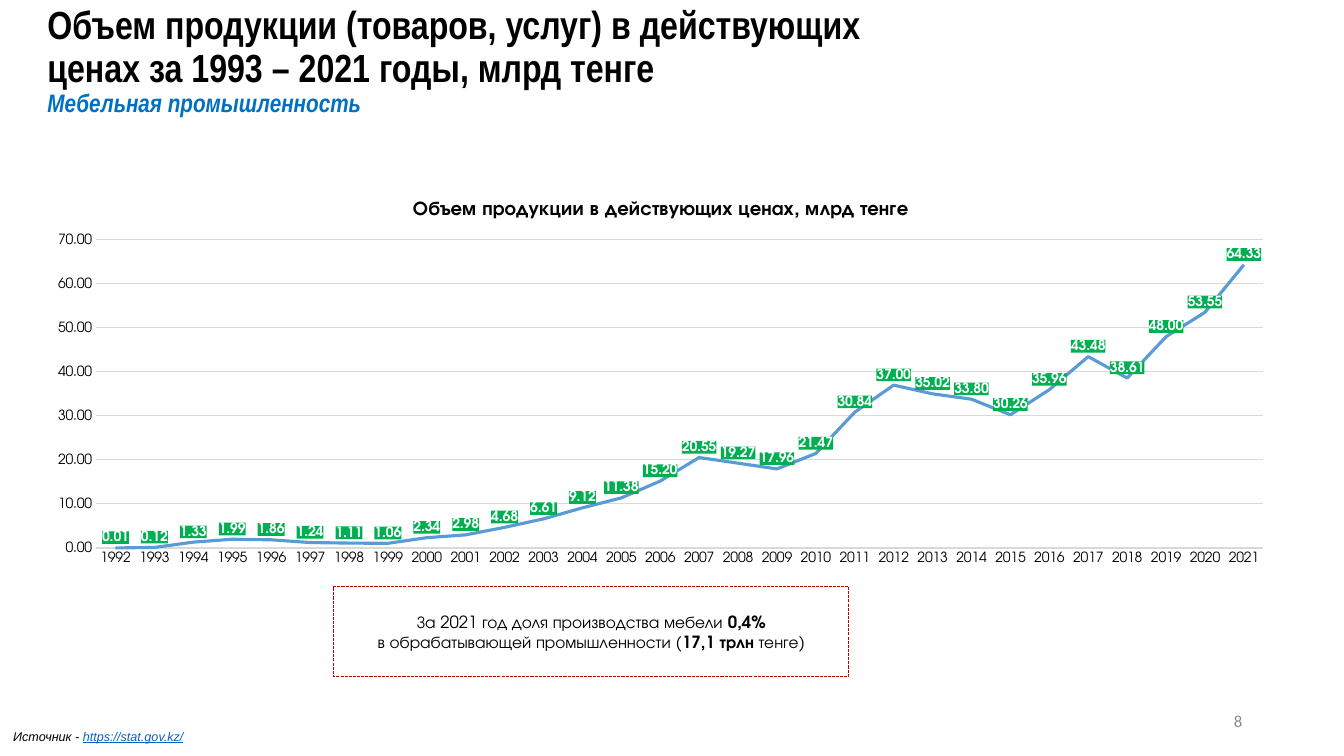
from lxml import etree
from pptx import Presentation
from pptx.chart.data import CategoryChartData
from pptx.dml.color import RGBColor
from pptx.enum.chart import XL_CHART_TYPE, XL_LABEL_POSITION, XL_MARKER_STYLE, XL_TICK_MARK
from pptx.enum.dml import MSO_LINE
from pptx.enum.shapes import MSO_SHAPE
from pptx.enum.text import MSO_ANCHOR, MSO_AUTO_SIZE, PP_ALIGN
from pptx.oxml import parse_xml
from pptx.oxml.ns import nsdecls
from pptx.util import Emu, Pt

PX = 9144  # one hundredth of an inch
LEFT, CENTER, RIGHT = PP_ALIGN.LEFT, PP_ALIGN.CENTER, PP_ALIGN.RIGHT
MIDDLE, TOP = MSO_ANCHOR.MIDDLE, MSO_ANCHOR.TOP
NO_AUTOFIT = MSO_AUTO_SIZE.NONE
RECTANGLE = MSO_SHAPE.RECTANGLE
LINE_CHART = XL_CHART_TYPE.LINE
ABOVE = XL_LABEL_POSITION.ABOVE
NO_TICK = XL_TICK_MARK.NONE
NO_MARKER = XL_MARKER_STYLE.NONE
DASH = MSO_LINE.SQUARE_DOT
TITLE_ONLY = 5

COLORS = {
    "text": "000000", "white": "FFFFFF", "subtitle": "0070C0", "frame": "C00000",
    "grid": "D9D9D9", "series": "5B9BD5", "label": "00B050", "url": "0563C1", "number": "8C8C8C",
}
GEOMETRIC = "TeX Gyre Adventor"
HEADING = {"name": "Arial Narrow", "size": 28, "bold": True, "color": "text"}
SUBTITLE = {**HEADING, "size": 18, "italic": True, "color": "subtitle"}
NOTE = {"name": GEOMETRIC, "size": 12, "bold": False, "color": "text"}
NOTE_BOLD = {**NOTE, "bold": True}
AXIS = {"name": GEOMETRIC, "size": 10, "bold": False, "color": "text"}
LABEL = {**AXIS, "bold": True, "color": "white"}
CHART_TITLE = {**AXIS, "size": 14, "bold": True}
SOURCE = {"name": "Arial", "size": 9, "italic": True, "color": "text"}
URL = {**SOURCE, "underline": True, "color": "url"}
NUMBER = {"name": "Calibri", "size": 12, "color": "number"}

FIRST_YEAR = 1992
OUTPUT = [
    0.01, 0.12, 1.33, 1.99, 1.86, 1.24, 1.11, 1.06, 2.34, 2.98,
    4.68, 6.61, 9.12, 11.38, 15.20, 20.55, 19.27, 17.96, 21.47, 30.84,
    37.00, 35.02, 33.80, 30.26, 35.96, 43.48, 38.61, 48.00, 53.55, 64.33,
]
SERIES_NAME = "Объем продукции в действующих ценах, млрд тенге"


class Page:
    def __init__(self, deck):
        self.slide = deck.slides.add_slide(deck.slide_layouts[TITLE_ONLY])
        self.shapes = self.slide.shapes

    def area(self, *lengths):
        return [Emu(length * PX) for length in lengths]

    def style(self, font, look):
        for key, value in look.items():
            if key == "color":
                font.color.rgb = RGBColor.from_string(COLORS[value])
            else:
                setattr(font, key, Pt(value) if key == "size" else value)

    def stroke(self, line, color, width):
        line.color.rgb = RGBColor.from_string(COLORS[color])
        line.width = Pt(width)

    def fill_text(self, box, paragraphs, align=LEFT, anchor=MIDDLE):
        """Fill a box with paragraphs, each a list of (text, look) spans."""
        frame = box.text_frame
        frame.word_wrap = True
        frame.auto_size = NO_AUTOFIT
        frame.vertical_anchor = anchor
        for index, spans in enumerate(paragraphs):
            para = frame.add_paragraph() if index else frame.paragraphs[0]
            para.alignment = align
            for text, look in spans:
                if text == "\n":
                    para.add_line_break()
                    continue
                span = para.add_run()
                span.text = text
                self.style(span.font, look)
        return frame

    def title(self, area, spans):
        box = self.shapes.title
        box.left, box.top, box.width, box.height = self.area(*area)
        self.fill_text(box, [spans]).paragraphs[0].line_spacing = 0.9

    def text(self, area, spans, **layout):
        return self.fill_text(self.shapes.add_textbox(*self.area(*area)), [spans], **layout)

    def framed_note(self, area, paragraphs):
        box = self.shapes.add_shape(RECTANGLE, *self.area(*area))
        box.shadow.inherit = False
        box.fill.background()
        self.stroke(box.line, "frame", 0.75)
        box.line.dash_style = DASH
        self.fill_text(box, paragraphs, align=CENTER)

    def line_chart(self, area, name, categories, values):
        data = CategoryChartData(number_format="0.00")
        data.categories = categories
        data.add_series(name, values)
        chart = self.shapes.add_chart(LINE_CHART, *self.area(*area), data).chart
        self.style(chart.font, AXIS)
        chart.has_legend = False
        chart.has_title = True
        heading = chart.chart_title.text_frame
        heading.text = name
        self.style(heading.paragraphs[0].runs[0].font, CHART_TITLE)

        for axis in (chart.category_axis, chart.value_axis):
            axis.major_tick_mark = axis.minor_tick_mark = NO_TICK
            self.style(axis.tick_labels.font, AXIS)
        self.stroke(chart.category_axis.format.line, "grid", 0.75)
        scale = chart.value_axis
        scale.minimum_scale, scale.maximum_scale, scale.major_unit = 0, 70, 10
        scale.tick_labels.number_format = "#,##0.00"
        scale.tick_labels.number_format_is_linked = False
        scale.format.line.fill.background()
        self.stroke(scale.major_gridlines.format.line, "grid", 0.75)

        plot = chart.plots[0]
        plot.vary_by_categories = False
        series = plot.series[0]
        series.smooth = False
        series.marker.style = NO_MARKER
        self.stroke(series.format.line, "series", 2.25)
        labels = series.data_labels
        labels.show_value = True
        labels.position = ABOVE
        labels.number_format = "0.00"
        labels.number_format_is_linked = False
        self.style(labels.font, LABEL)
        self.fill_labels(chart)
        self.place_plot(chart, x=0.05, y=0.15, w=0.93, h=0.79)

    def fill_labels(self, chart):
        number_format = chart.element.xpath(".//c:ser/c:dLbls/c:numFmt")[0]
        number_format.addnext(parse_xml(
            f'<c:spPr {nsdecls("c", "a")}><a:solidFill>'
            f'<a:srgbClr val="{COLORS["label"]}"/></a:solidFill></c:spPr>'))

    def place_plot(self, chart, **fractions):
        """Fix the inner plot area as fractions of the chart."""
        plot_area = chart.element.xpath(".//c:plotArea")[0]
        for automatic in plot_area.xpath("c:layout"):
            plot_area.remove(automatic)
        layout = parse_xml(f'<c:layout {nsdecls("c")}><c:manualLayout/></c:layout>')
        settings = {"layoutTarget": "inner", "xMode": "edge", "yMode": "edge", **fractions}
        for tag, value in settings.items():
            etree.SubElement(layout[0], f"{{{layout.nsmap['c']}}}{tag}", val=str(value))
        plot_area.insert(0, layout)


def main():
    deck = Presentation()
    deck.slide_width, deck.slide_height = Emu(1333 * PX), Emu(750 * PX)
    page = Page(deck)
    page.title((37, 12, 848, 99), [
        ("Объем продукции (товаров, услуг) в действующих ценах за 1993 – 2021 годы, млрд тенге", HEADING),
        ("\n", HEADING),
        ("Мебельная промышленность", SUBTITLE),
    ])
    page.text((942, 695, 300, 40), [("8", NUMBER)], align=RIGHT)
    page.framed_note((331, 582, 511, 89), [
        [("За 2021 год доля производства мебели ", NOTE), ("0,4%", NOTE_BOLD)],
        [("в обрабатывающей промышленности (", NOTE), ("17,1 трлн ", NOTE_BOLD), ("тенге)", NOTE)],
    ])
    years = [str(FIRST_YEAR + offset) for offset in range(len(OUTPUT))]
    page.line_chart((33, 180, 1245, 387), SERIES_NAME, years, OUTPUT)
    source = page.text((12, 722, 1195, 17),
                       [("Источник - ", SOURCE), ("https://stat.gov.kz/", URL)], anchor=TOP)
    for side, margin in {"left": 1, "top": 1, "right": 0, "bottom": 0}.items():
        setattr(source, f"margin_{side}", Emu(margin * PX))
    deck.save("out.pptx")


if __name__ == "__main__":
    main()
